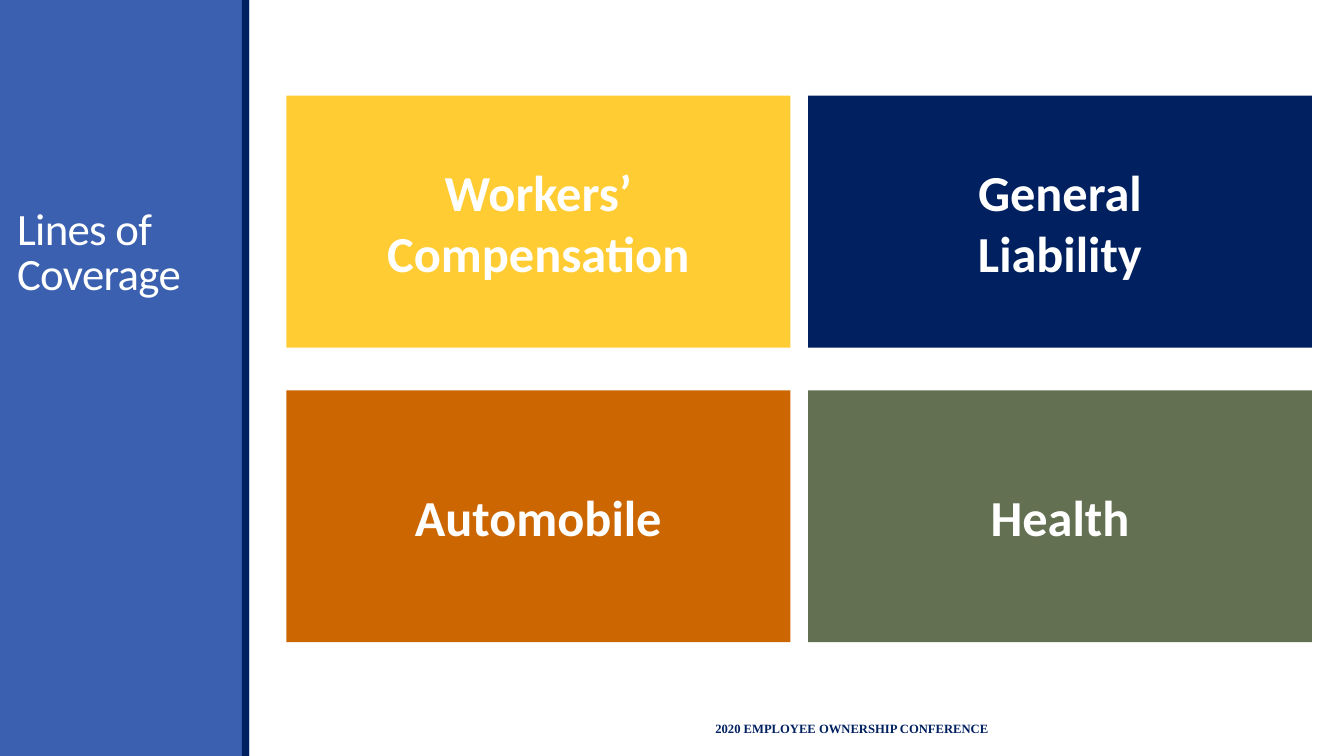
from dataclasses import dataclass

from pptx import Presentation
from pptx.dml.color import RGBColor as RGB
from pptx.enum.shapes import MSO_SHAPE as Preset
from pptx.enum.text import MSO_ANCHOR as Anchor, PP_ALIGN as Align
from pptx.util import Pt


@dataclass(frozen=True)
class Theme:
    white: str = "FFFFFF"
    navy: str = "002060"
    blue: str = "3B60AF"
    yellow: str = "FFCC33"
    orange: str = "CC6600"
    green: str = "637052"
    sans: str = "Calibri"
    serif: str = "Times New Roman"
    title_size: int = 32
    card_size: int = 36
    footer_size: int = 9


def write(frame, text, *, font, size, color, bold=False, align=Align.LEFT,
          anchor=Anchor.MIDDLE, line_spacing=None, tracking=None):
    frame.word_wrap = True
    frame.vertical_anchor = anchor
    paragraph = frame.paragraphs[0]
    paragraph.text = text
    paragraph.alignment = align
    paragraph.line_spacing = line_spacing
    for run in paragraph.runs:
        run.font.name = font
        run.font.size = Pt(size)
        run.font.bold = bold
        run.font.color.rgb = RGB.from_string(color)
        if tracking is not None:
            run.font._element.set("spc", str(round(tracking * 100)))


class CoverageSlide:
    """Holds the theme and the current slide and adds each kind of element."""

    def __init__(self, deck, theme):
        self.theme = theme
        self.slide = deck.slides.add_slide(deck.slide_layouts[5])

    def block(self, left, top, width, height, color):
        block = self.slide.shapes.add_shape(
            Preset.RECTANGLE, Pt(left), Pt(top), Pt(width), Pt(height))
        block.shadow.inherit = False
        block.fill.solid()
        block.fill.fore_color.rgb = RGB.from_string(color)
        block.line.fill.background()
        return block

    def title(self, text, left, top, width, height):
        title = self.slide.shapes.title
        title.left, title.top = Pt(left), Pt(top)
        title.width, title.height = Pt(width), Pt(height)
        title.element.getparent().append(title.element)
        write(title.text_frame, text, font=self.theme.sans,
              size=self.theme.title_size, color=self.theme.white,
              anchor=Anchor.BOTTOM, line_spacing=0.85, tracking=-0.5)

    def card(self, text, left, top, width, height, color):
        card = self.block(left, top, width, height, color)
        write(card.text_frame, text, font=self.theme.sans,
              size=self.theme.card_size, color=self.theme.white,
              bold=True, align=Align.CENTER)

    def footer(self, text, left, top, width, height):
        footer = self.slide.shapes.add_textbox(
            Pt(left), Pt(top), Pt(width), Pt(height))
        footer.text_frame.margin_left = Pt(81)
        write(footer.text_frame, text, font=self.theme.serif,
              size=self.theme.footer_size, color=self.theme.navy, bold=True)


def main():
    theme = Theme()
    deck = Presentation()
    deck.slide_width, deck.slide_height = Pt(960), Pt(540)
    page = CoverageSlide(deck, theme)

    page.block(0, 0, 178, 540, theme.blue)
    page.block(172.8, 0, 5.2, 540, theme.navy)
    page.title("Lines of Coverage", 5, 38, 173, 180)
    page.footer("2020 EMPLOYEE OWNERSHIP CONFERENCE", 430, 506, 366, 29)

    coverages = [
        ("Workers’\vCompensation", theme.yellow),
        ("General\vLiability", theme.navy),
        ("Automobile", theme.orange),
        ("Health", theme.green),
    ]
    card_width, card_height = 360, 180
    column_gap, row_gap = 12.6, 30.4
    for index, (coverage, color) in enumerate(coverages):
        row, column = divmod(index, 2)
        page.card(coverage,
                  204.6 + column * (card_width + column_gap),
                  68.4 + row * (card_height + row_gap),
                  card_width, card_height, color)

    deck.save("out.pptx")


if __name__ == "__main__":
    main()
